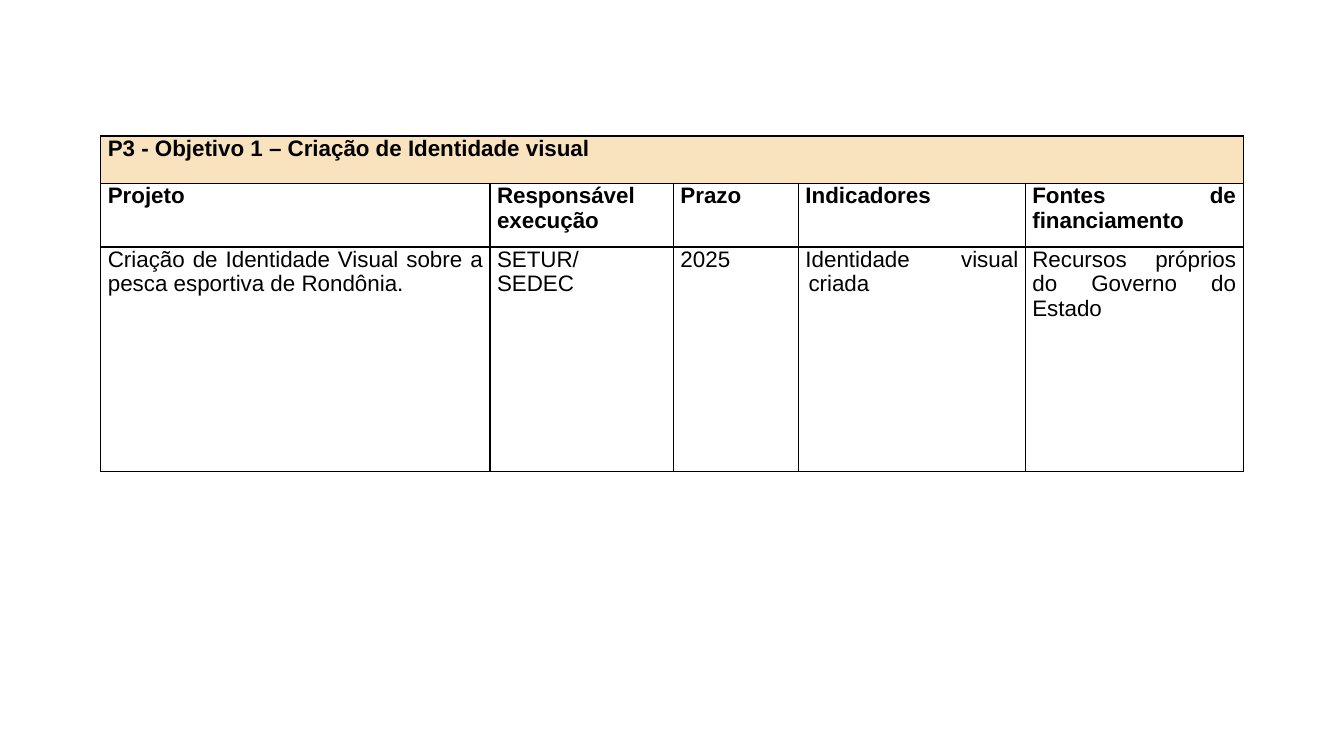
from enum import Enum

from lxml.etree import SubElement
from pptx import Presentation
from pptx.dml.color import RGBColor
from pptx.enum.text import PP_ALIGN
from pptx.oxml.ns import qn
from pptx.util import Inches, Pt


class Theme(Enum):
    FONT = "Arial"
    SIZE = Pt(16)
    INK = "000000"
    BANNER = "F9E3BE"
    BORDER = Pt(1)
    INSET = Inches(0.07)
    HANGING = Inches(0.03)


COLUMN_WIDTHS = [3.86, 1.82, 1.24, 2.25, 2.16]
ROW_HEIGHTS = [0.47, 0.63, 2.23]
ROWS = [
    ["P3 - Objetivo 1 – Criação de Identidade visual"],
    ["Projeto", "Responsável execução", "Prazo", "Indicadores", "Fontes de financiamento"],
    [
        "Criação de Identidade Visual sobre a pesca esportiva de Rondônia.",
        "SETUR/\nSEDEC",
        "2025",
        "Identidade visual criada",
        "Recursos próprios do Governo do Estado",
    ],
]


def draw_borders(cell):
    properties = cell._tc.get_or_add_tcPr()
    for side in ("a:lnL", "a:lnR", "a:lnT", "a:lnB"):
        line = SubElement(properties, qn(side), w=str(int(Theme.BORDER.value)))
        fill = SubElement(line, qn("a:solidFill"))
        SubElement(fill, qn("a:srgbClr"), val=Theme.INK.value)


deck = Presentation()
deck.slide_width = Inches(13.33)
deck.slide_height = Inches(7.5)
page = deck.slides.add_slide(deck.slide_layouts[6])

frame = page.shapes.add_table(
    len(ROW_HEIGHTS), len(COLUMN_WIDTHS), Inches(1), Inches(1.35),
    Inches(sum(COLUMN_WIDTHS)), Inches(sum(ROW_HEIGHTS)),
)
table = frame.table
table.first_row = False
table.horz_banding = False
for column, width in zip(table.columns, COLUMN_WIDTHS):
    column.width = Inches(width)
for row, height in zip(table.rows, ROW_HEIGHTS):
    row.height = Inches(height)

for cell in table.iter_cells():
    draw_borders(cell)
    cell.fill.background()
    cell.margin_left = cell.margin_right = Theme.INSET.value
    cell.margin_top = cell.margin_bottom = 0

banner = table.cell(0, 0)
banner.merge(table.cell(0, len(COLUMN_WIDTHS) - 1))
banner.fill.solid()
banner.fill.fore_color.rgb = RGBColor.from_string(Theme.BANNER.value)

for row_index, texts in enumerate(ROWS):
    for column_index, text in enumerate(texts):
        cell = table.cell(row_index, column_index)
        cell.text_frame.text = text
        for para in cell.text_frame.paragraphs:
            para.alignment = PP_ALIGN.JUSTIFY
            for span in para.runs:
                span.font.name = Theme.FONT.value
                span.font.size = Theme.SIZE.value
                span.font.bold = row_index < 2
                span.font.color.rgb = RGBColor.from_string(Theme.INK.value)

indicator = table.cell(2, 3).text_frame.paragraphs[0]
indent = indicator._p.get_or_add_pPr()
indent.set("marL", str(int(Theme.HANGING.value)))
indent.set("indent", str(-int(Theme.HANGING.value)))

deck.save("out.pptx")
